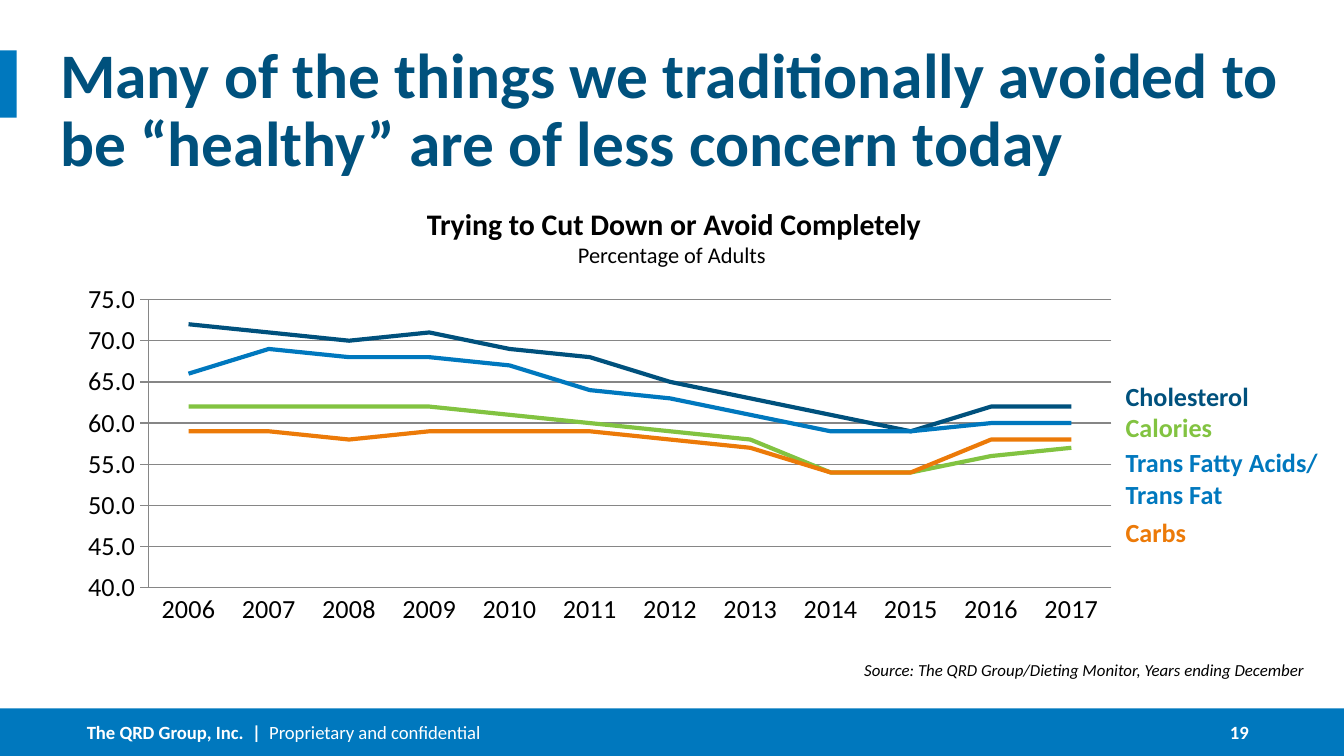
from dataclasses import dataclass
from typing import Any

from lxml import etree
from pptx import Presentation
from pptx import util as u
from pptx.chart import data as chart_data
from pptx.dml import color
from pptx.enum import chart as charts, shapes, text
from pptx.oxml import ns

PX = 9525
COLORS = {"navy": "00517D", "blue": "0078BE", "green": "82C341", "orange": "EC7A08",
          "black": "000000", "white": "FFFFFF", "gray": "868686"}
YEARS = [str(year) for year in range(2006, 2018)]
SERIES = [
    ("Cholesterol", "navy", [72, 71, 70, 71, 69, 68, 65, 63, 61, 59, 62, 62]),
    ("Calories", "green", [62, 62, 62, 62, 61, 60, 59, 58, 54, 54, 56, 57]),
    ("Trans Fat", "blue", [66, 69, 68, 68, 67, 64, 63, 61, 59, 59, 60, 60]),
    ("Carbs", "orange", [59, 59, 58, 59, 59, 59, 58, 57, 54, 54, 58, 58]),
]
LABELS = [
    (["Cholesterol"], "navy", 267, 110, 33),
    (["Calories"], "green", 289, 84, 33),
    (["Carbs"], "orange", 364, 66, 33),
    (["Trans Fatty Acids/", "Trans Fat"], "blue", 314, 160, 55),
]


def rgb(name):
    return color.RGBColor.from_string(COLORS[name])


def add_span(para, words, size=14, ink="black", bold=False, italic=False, face="Calibri"):
    span = para.add_run()
    span.text = words
    font = span.font
    font.name, font.size, font.bold, font.italic = face, u.Pt(size), bold, italic
    font.color.rgb = rgb(ink)


@dataclass
class Painter:
    """Draws styled elements on the current slide, measured in px."""

    slide: Any
    face: str = "Calibri"

    def bar(self, *place):
        shape = self.slide.shapes.add_shape(
            shapes.MSO_SHAPE.RECTANGLE, *(n * PX for n in place))
        shape.shadow.inherit = False
        shape.fill.solid()
        shape.fill.fore_color.rgb = rgb("blue")
        shape.line.fill.background()

    def text(self, lines, place, insets=(0, 0, 0, 0), align="LEFT", anchor="TOP",
             spacing=None, after=None, wrap=True, grow=False, **style):
        box = self.slide.shapes.add_textbox(*(n * PX for n in place))
        frame = box.text_frame
        frame.word_wrap = wrap
        frame.auto_size = (text.MSO_AUTO_SIZE.SHAPE_TO_FIT_TEXT if grow
                           else text.MSO_AUTO_SIZE.NONE)
        frame.vertical_anchor = text.MSO_ANCHOR[anchor]
        (frame.margin_left, frame.margin_top,
         frame.margin_right, frame.margin_bottom) = (n * PX for n in insets)
        for index, spans in enumerate(lines):
            para = frame.add_paragraph() if index else frame.paragraphs[0]
            para.alignment = text.PP_ALIGN[align]
            if spacing:
                para.line_spacing = spacing
            if after:
                para.space_after = u.Pt(after)
            for words, extra in ([(spans, {})] if isinstance(spans, str) else spans):
                add_span(para, words, face=self.face, **{**style, **extra})

    def line_chart(self, place, plot):
        data = chart_data.CategoryChartData(number_format="0")
        data.categories = YEARS
        for name, _, values in SERIES:
            data.add_series(name, values)
        chart = self.slide.shapes.add_chart(
            charts.XL_CHART_TYPE.LINE, *(n * PX for n in place), data).chart
        chart.has_legend = chart.has_title = False
        chart.font.name, chart.font.size = self.face, u.Pt(14)
        chart.font.color.rgb = rgb("black")
        chart.plots[0].vary_by_categories = False
        for series, (_, ink, _) in zip(chart.plots[0].series, SERIES):
            series.smooth = False
            series.marker.style = charts.XL_MARKER_STYLE.NONE
            series.format.line.width = u.Pt(2.25)
            series.format.line.color.rgb = rgb(ink)
        years, percent = chart.category_axis, chart.value_axis
        years.major_tick_mark = charts.XL_TICK_MARK.NONE
        percent.major_tick_mark = charts.XL_TICK_MARK.OUTSIDE
        percent.minimum_scale, percent.maximum_scale, percent.major_unit = 40, 75, 5
        percent.tick_labels.number_format = "0.0"
        percent.tick_labels.number_format_is_linked = False
        percent.has_major_gridlines = True
        for item in (years, percent, percent.major_gridlines):
            item.format.line.color.rgb = rgb("gray")
            item.format.line.width = u.Pt(0.75)
        width, height = place[2:]
        self.place_plot(chart, [n / full for n, full in zip(plot, (width, height) * 2)])

    def place_plot(self, chart, shares):
        area = chart.plots[0]._element.getparent()
        for old in area.findall(ns.qn("c:layout")):
            area.remove(old)
        layout = etree.Element(ns.qn("c:layout"))
        manual = etree.SubElement(layout, ns.qn("c:manualLayout"))
        settings = [("layoutTarget", "inner"), ("xMode", "edge"), ("yMode", "edge"),
                    *zip("xywh", shares)]
        for tag, value in settings:
            etree.SubElement(manual, ns.qn(f"c:{tag}")).set("val", str(value))
        area.insert(0, layout)


def main():
    deck = Presentation()
    deck.slide_width, deck.slide_height = 960 * PX, 540 * PX
    page = Painter(deck.slides.add_slide(deck.slide_layouts[6]))
    page.bar(0, 506, 960, 34)
    page.text([[("The QRD Group, Inc.  |  ", {"bold": True}), ("Proprietary and confidential", {})]],
              (62, 506, 395, 34), anchor="MIDDLE", size=10, ink="white")
    page.bar(0, 36, 12, 48)
    page.text(["19"], (844, 506, 62, 34), insets=(0, 5, 14, 5), align="RIGHT",
              anchor="MIDDLE", wrap=False, size=10, ink="white", bold=True)
    page.text(["Many of the things we traditionally avoided to be “healthy” are of less concern today"],
              (43, 31, 888, 48), spacing=0.9, after=2, size=34, ink="navy", bold=True)
    page.line_chart((47, 197, 788, 265), (59, 17, 688, 206))
    page.text(["Source: The QRD Group/Dieting Monitor, Years ending December"],
              (43, 458, 888, 28), align="RIGHT", anchor="BOTTOM", spacing=0.85,
              size=9, italic=True)
    page.text(["Trying to Cut Down or Avoid Completely"], (304, 142, 355, 36),
              insets=(0, 5, 0, 5), align="CENTER", wrap=False, grow=True, size=16, bold=True)
    page.text(["Percentage of Adults"], (402, 172, 156, 25), insets=(10, 5, 10, 5),
              align="CENTER", spacing=0.75, wrap=False, grow=True, size=12)
    for lines, ink, top, width, height in LABELS:
        page.text(lines, (794, top, width, height), insets=(10, 5, 10, 5),
                  wrap=False, grow=True, ink=ink, bold=True)
    deck.save("out.pptx")


if __name__ == "__main__":
    main()
